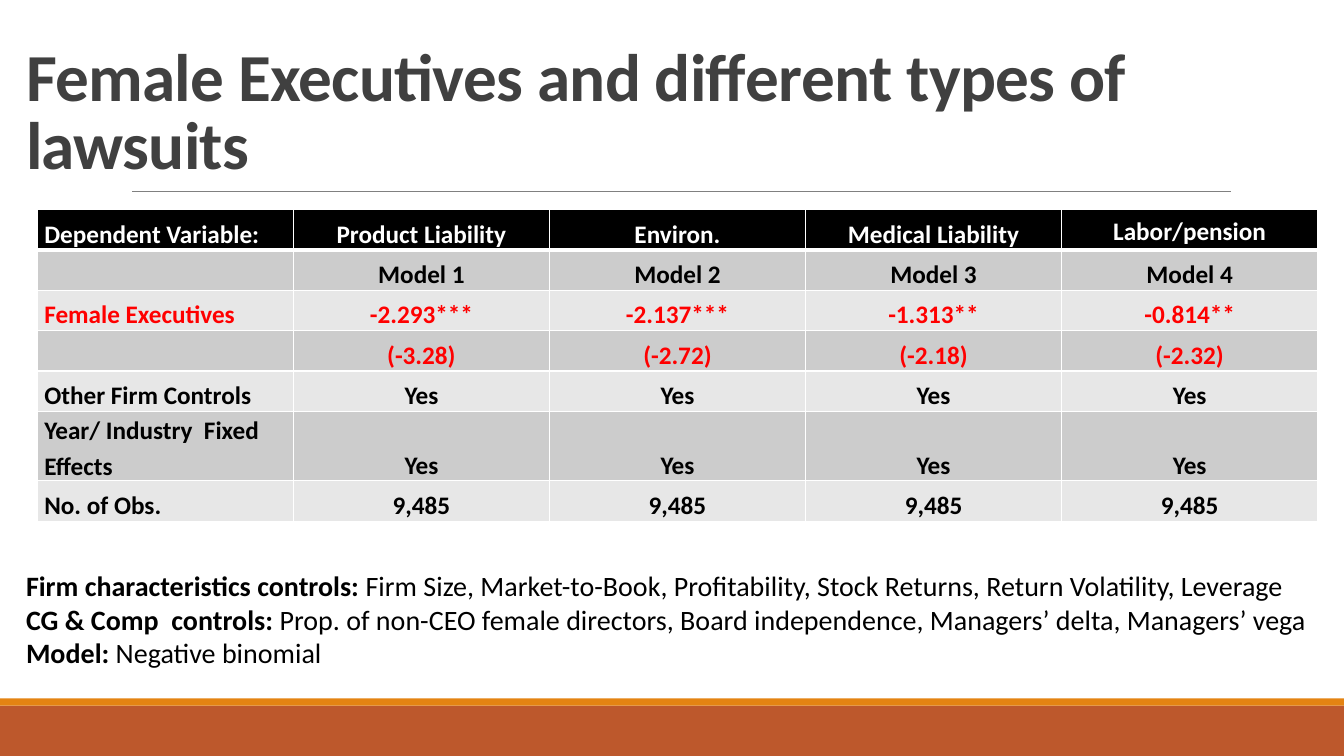
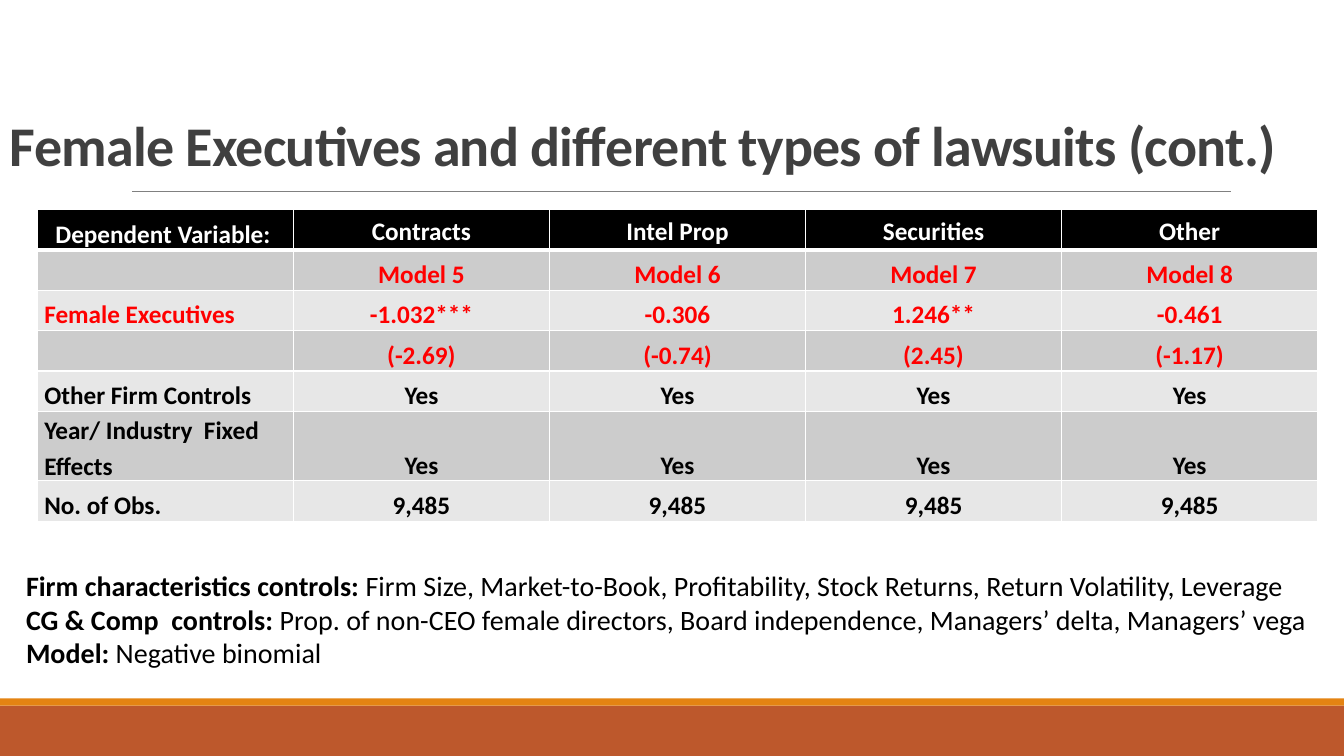
from lxml.etree import SubElement
from pptx import Presentation
from pptx.dml.color import RGBColor
from pptx.enum.shapes import MSO_CONNECTOR, MSO_SHAPE
from pptx.enum.text import MSO_ANCHOR, MSO_AUTO_SIZE, PP_ALIGN
from pptx.oxml.ns import qn
from pptx.util import Inches, Pt

BLACK, WHITE, RED = "000000", "FFFFFF", "FF0000"
TITLE_GRAY, RULE_GRAY = "404040", "808080"
DARK_BAND, LIGHT_BAND = "CCCCCC", "E7E7E7"
FOOTERS = [(7, 0.5, "BD582C"), (6.93, 0.07, "E48312")]
ROW_HEIGHTS = [0.4, 0.4, 0.4, 0.4, 0.4, 0.68, 0.4]
COLUMN_WIDTH = 2.54

CONTROL_ROWS = [
    ["Other Firm Controls"] + ["Yes"] * 4,
    ["Year/ Industry  Fixed Effects"] + ["Yes"] * 4,
    ["No. of Obs."] + ["9,485"] * 4,
]
NOTES = [
    ("Firm characteristics controls: ",
     "Firm Size, Market-to-Book, Profitability, Stock Returns, Return Volatility, Leverage"),
    ("CG & Comp  controls: ",
     "Prop. of non-CEO female directors, Board independence, Managers’ delta, Managers’ vega"),
    ("Model:", " Negative binomial"),
]
# centered_from: first header column whose text sits at mid height
SLIDES = [
    {
        "title": "Female Executives and different types of lawsuits",
        "title_box": (0.16, 0.21, 12.91, 1.66),
        "title_size": 48,
        "model_color": BLACK,
        "label_margin": 0.07,
        "centered_from": 4,
        "rows": [
            ["Dependent Variable:", "Product Liability", "Environ.", "Medical Liability",
             "Labor/pension"],
            ["", "Model 1", "Model 2", "Model 3", "Model 4"],
            ["Female Executives", "-2.293***", "-2.137***", "-1.313**", "-0.814**"],
            ["", "(-3.28)", "(-2.72)", "(-2.18)", "(-2.32)"],
        ],
    },
    {
        "title": "Female Executives and different types of lawsuits (cont.)",
        "title_box": (0, 0.15, 13.07, 1.66),
        "title_size": 40,
        "model_color": RED,
        "label_margin": 0.18,
        "centered_from": 1,
        "rows": [
            ["Dependent Variable:", "Contracts", "Intel Prop", "Securities", "Other"],
            ["", "Model 5", "Model 6", "Model 7", "Model 8"],
            ["Female Executives", "-1.032***", "-0.306", "1.246**", "-0.461"],
            ["", "(-2.69)", "(-0.74)", "(2.45)", "(-1.17)"],
        ],
    },
]


def rgb(color):
    return RGBColor.from_string(color)


def add_span(para, text, size, color, bold=True):
    span = para.add_run()
    span.text = text
    span.font.name = "Calibri"
    span.font.size = Pt(size)
    span.font.bold = bold
    span.font.color.rgb = rgb(color)
    return span


deck = Presentation()
deck.slide_width = Inches(13.33)
deck.slide_height = Inches(7.5)

for content in SLIDES:
    page = deck.slides.add_slide(deck.slide_layouts[6])

    # Footer bands and the rule under the title
    for top, height, color in FOOTERS:
        band = page.shapes.add_shape(
            MSO_SHAPE.RECTANGLE, 0, Inches(top), deck.slide_width, Inches(height))
        band.shadow.inherit = False
        band.fill.solid()
        band.fill.fore_color.rgb = rgb(color)
        band.line.fill.background()
    rule = page.shapes.add_connector(
        MSO_CONNECTOR.STRAIGHT, Inches(1.31), Inches(1.9), Inches(12.21), Inches(1.9))
    rule.line.color.rgb = rgb(RULE_GRAY)
    rule.line.width = Pt(0.5)
    SubElement(rule._element.spPr, qn("a:effectLst"))

    # Title
    title_box = page.shapes.add_textbox(*map(Inches, content["title_box"]))
    title_box.text_frame.word_wrap = True
    title_box.text_frame.vertical_anchor = MSO_ANCHOR.BOTTOM
    para = title_box.text_frame.paragraphs[0]
    para.line_spacing = 0.85
    span = add_span(para, content["title"], content["title_size"], TITLE_GRAY)
    span.font._element.set("spc", "-50")

    # Notes on the controls
    notes_box = page.shapes.add_textbox(
        Inches(0.16), Inches(5.59), Inches(13.06), Inches(1.11))
    notes_box.text_frame.word_wrap = True
    notes_box.text_frame.auto_size = MSO_AUTO_SIZE.SHAPE_TO_FIT_TEXT
    for index, (label, detail) in enumerate(NOTES):
        frame = notes_box.text_frame
        para = frame.add_paragraph() if index else frame.paragraphs[0]
        add_span(para, label, 20, BLACK)
        add_span(para, detail, 20, BLACK, bold=False)

    # Regression table
    rows = content["rows"] + CONTROL_ROWS
    text_colors = [WHITE, content["model_color"], RED, RED] + [BLACK] * len(CONTROL_ROWS)
    table = page.shapes.add_table(
        len(rows), len(rows[0]), Inches(0.37), Inches(2.08),
        Inches(COLUMN_WIDTH * len(rows[0])), Inches(sum(ROW_HEIGHTS))).table
    for column in table.columns:
        column.width = Inches(COLUMN_WIDTH)
    for row_index, row in enumerate(rows):
        table.rows[row_index].height = Inches(ROW_HEIGHTS[row_index])
        for column_index, text in enumerate(row):
            cell = table.cell(row_index, column_index)
            is_header = row_index == 0
            is_label = column_index == 0

            properties = cell._tc.get_or_add_tcPr()
            for side in ("lnL", "lnR", "lnT", "lnB"):
                below_header = (row_index, side) in ((0, "lnB"), (1, "lnT"))
                border = SubElement(
                    properties, qn(f"a:{side}"), w=str(Pt(3 if below_header else 1)))
                border_fill = SubElement(border, qn("a:solidFill"))
                SubElement(border_fill, qn("a:srgbClr"), val=WHITE)
            cell.fill.solid()
            cell.fill.fore_color.rgb = rgb(
                BLACK if is_header else DARK_BAND if row_index % 2 else LIGHT_BAND)

            cell.margin_left = Inches(
                content["label_margin"] if is_header and is_label else 0.07)
            cell.margin_right = Inches(0.07)
            cell.margin_top = cell.margin_bottom = 0
            centered = is_header and column_index >= content["centered_from"]
            cell.vertical_anchor = MSO_ANCHOR.MIDDLE if centered else MSO_ANCHOR.BOTTOM
            para = cell.text_frame.paragraphs[0]
            para.alignment = PP_ALIGN.LEFT if is_label else PP_ALIGN.CENTER
            para.line_spacing = 1.15
            if text:
                add_span(para, text, 18, text_colors[row_index])

deck.save("out.pptx")
